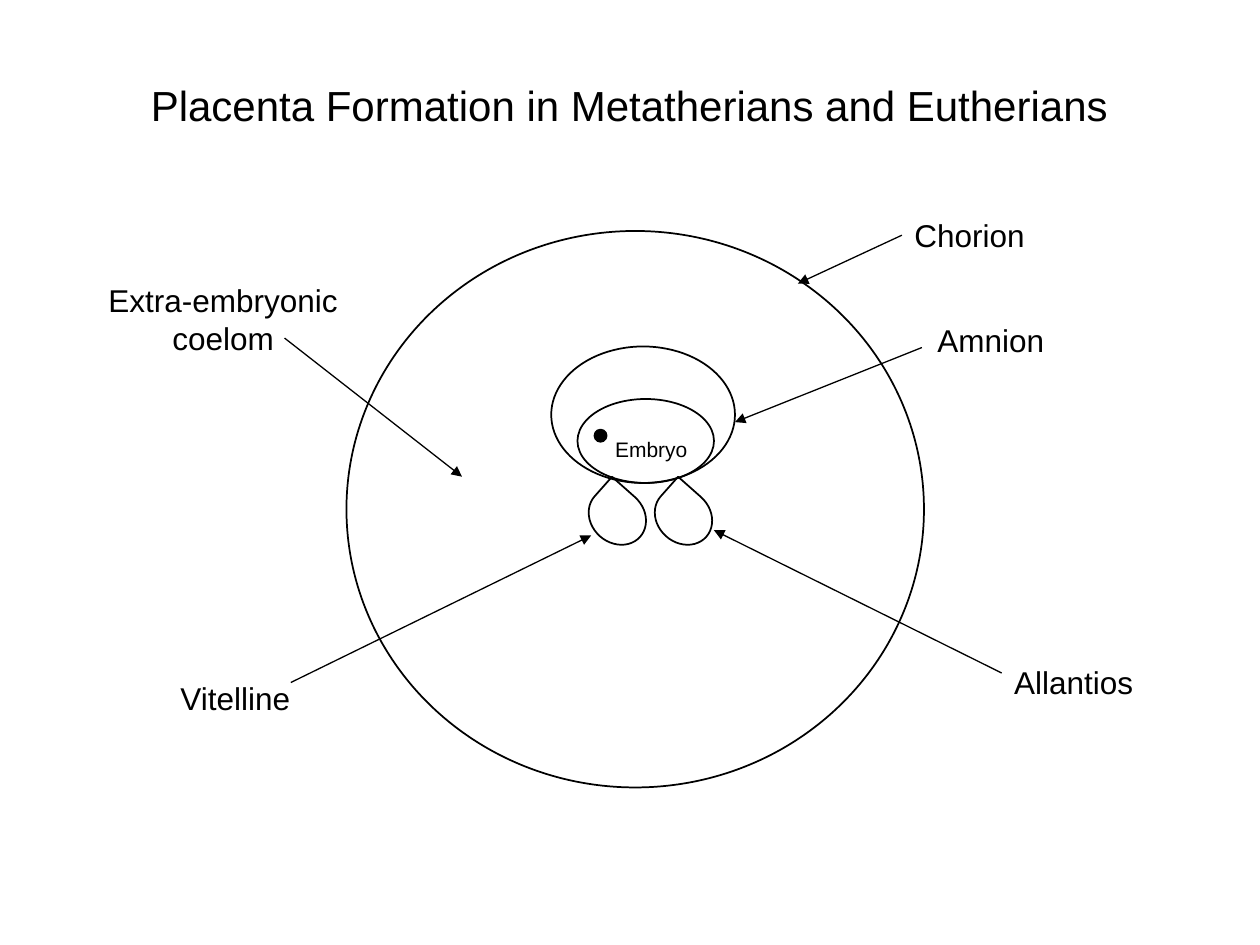
from lxml import etree
from pptx import Presentation
from pptx.dml.color import RGBColor
from pptx.enum.shapes import MSO_CONNECTOR, MSO_SHAPE
from pptx.enum.text import MSO_AUTO_SIZE, PP_ALIGN
from pptx.oxml.ns import qn
from pptx.util import Inches, Pt

OVAL, TEARDROP = MSO_SHAPE.OVAL, MSO_SHAPE.TEAR
LEFT, CENTER = PP_ALIGN.LEFT, PP_ALIGN.CENTER
STRAIGHT = MSO_CONNECTOR.STRAIGHT
FIT_SHAPE = MSO_AUTO_SIZE.SHAPE_TO_FIT_TEXT

COLUMNS, ROWS = 120, 90
CELL = Inches(10) / COLUMNS
INK = "000000"
FONT = "Arial"
SAC_TILT = 311.6

# label, box, arrow start, arrow end, alignment
CALLOUTS = [
    ("Chorion", (85.9, 20, 13.1, 4.8), (85.9, 22.4), (76, 27), LEFT),
    ("Amnion", (88.1, 30, 12.7, 4.8), (87.8, 33.1), (70, 40.2), LEFT),
    ("Allantios", (95.4, 62.6, 13.9, 4.8), (95.4, 64.1), (68, 50.5), LEFT),
    ("Vitelline", (16, 64.1, 13, 4.8), (27.7, 65), (56.3, 51), LEFT),
    ("Extra-embryonic\ncoelom", (9, 26.2, 24.5, 8.5), (27.1, 32.2), (44, 45.4), CENTER),
]


def cells(*counts):
    """Turn counts of grid cells into slide lengths."""
    return [round(count * CELL) for count in counts]


def color(value):
    return RGBColor.from_string(value)


def add_outline(slide, kind, box, weight=1, fill=None, rotation=0):
    outline = slide.shapes.add_shape(kind, *cells(*box))
    outline.shadow.inherit = False
    outline.rotation = rotation
    outline.line.color.rgb = color(INK)
    outline.line.width = Pt(weight)
    if fill:
        outline.fill.solid()
        outline.fill.fore_color.rgb = color(fill)
    else:
        outline.fill.background()


def add_text(slide, text, box, size, align=LEFT, wrap=False):
    frame = slide.shapes.add_textbox(*cells(*box)).text_frame
    frame.word_wrap = wrap
    frame.auto_size = FIT_SHAPE
    frame.text = text
    for paragraph in frame.paragraphs:
        paragraph.alignment = align
        paragraph.font.name = FONT
        paragraph.font.size = Pt(size)
        paragraph.font.color.rgb = color(INK)


def add_arrow(slide, start, end):
    arrow = slide.shapes.add_connector(STRAIGHT, *cells(*start, *end))
    arrow.line.color.rgb = color(INK)
    arrow.line.width = Pt(0.75)
    etree.SubElement(arrow.line._get_or_add_ln(), qn("a:tailEnd"), type="triangle")
    etree.SubElement(arrow._element.spPr, qn("a:effectLst"))


def add_membranes(slide):
    chorion, amnion, embryo = (33, 22, 55, 53), (52.5, 33, 17.5, 13), (55, 38, 13, 8)
    for membrane in (chorion, amnion, embryo):
        add_outline(slide, OVAL, membrane)
    eye = (56.6, 40.9, 1.2, 1.2)
    add_outline(slide, OVAL, eye, weight=0.75, fill=INK)
    for sac_left in (56.3, 62.6):
        add_outline(slide, TEARDROP, (sac_left, 46.3, 5, 5.8), rotation=SAC_TILT)


def main():
    deck = Presentation()
    deck.slide_width, deck.slide_height = cells(COLUMNS, ROWS)
    slide = deck.slides.add_slide(deck.slide_layouts[6])

    add_text(slide, "Placenta Formation in Metatherians and Eutherians ",
             (13, 7, 95, 6), 24, CENTER, wrap=True)
    add_membranes(slide)
    add_text(slide, "Embryo", (57.4, 41, 9.4, 3.6), 12)
    for label, box, start, end, align in CALLOUTS:
        add_text(slide, label, box, 18, align)
        add_arrow(slide, start, end)

    deck.save("out.pptx")


if __name__ == "__main__":
    main()
